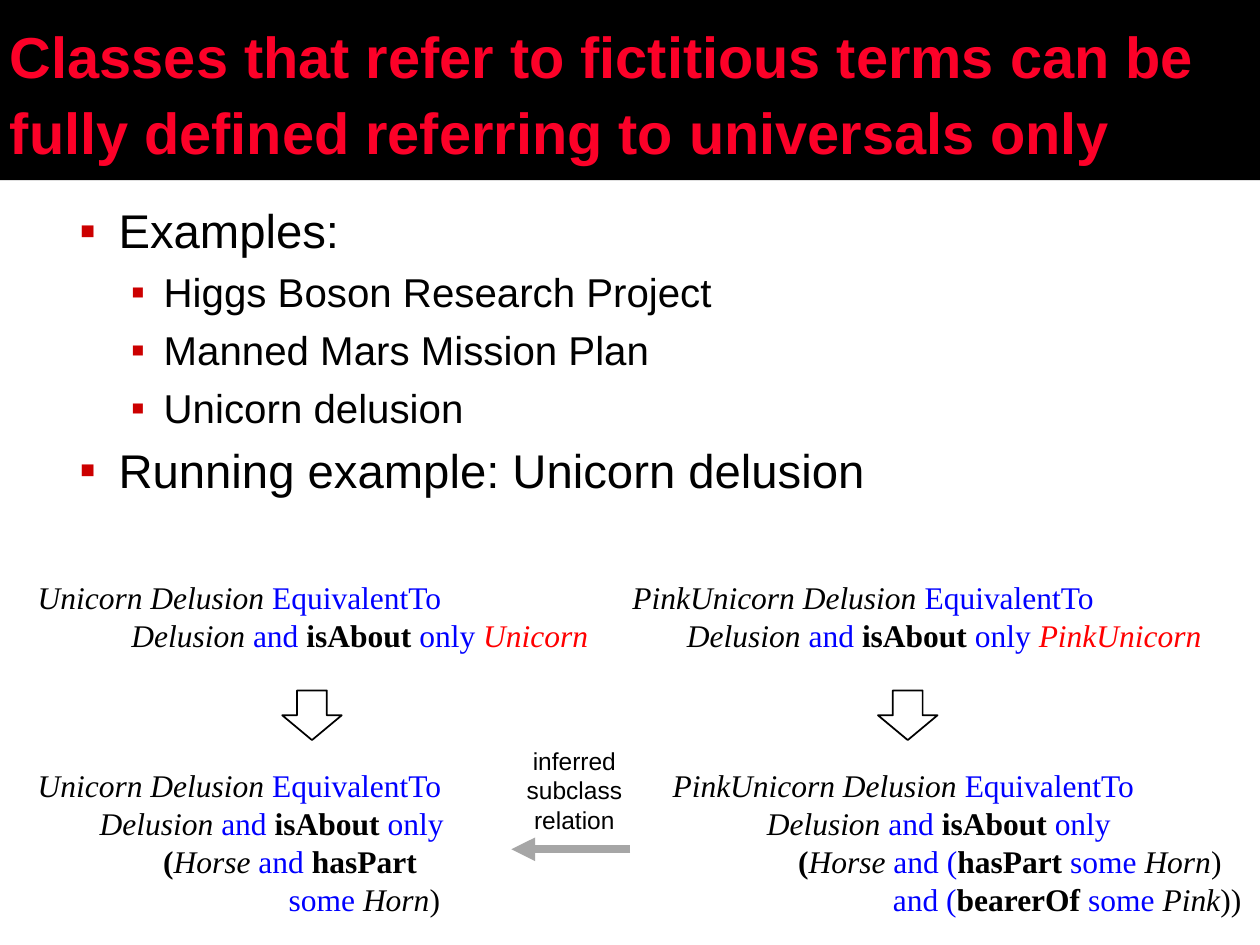
import pptx
import pptx.util
import pptx.dml.color
import pptx.enum.shapes
import pptx.enum.text
import pptx.oxml.ns
from lxml import etree
from pptx.util import Cm, Pt

COLORS = {
    "black": "000000",
    "title": "FC0128",
    "bullet": "CC0000",
    "keyword": "0000FF",
    "fictitious": "FF0000",
    "arrow": "A6A6A6",
}
STYLES = {
    "term": ("black", False, True),
    "keyword": ("keyword", False, False),
    "relation": ("black", True, False),
    "fictitious": ("fictitious", False, True),
    "plain": ("black", False, False),
}
BULLETS = [
    (0, "Examples:"),
    (1, "Higgs Boson Research Project"),
    (1, "Manned Mars Mission Plan"),
    (1, "Unicorn delusion"),
    (0, "Running example: Unicorn delusion"),
]
BULLET_LEVELS = [(27, 0.79, 0.79), (23, 1.7, 0.66)]
ABOUT_ONLY = [("term", "Delusion "), ("keyword", "and "), ("relation", "isAbout "), ("keyword", "only ")]


def rgb(name):
    """Return the named palette colour."""
    return pptx.dml.color.RGBColor.from_string(COLORS[name])


def format_run(run, size, font, color, bold=False, italic=False):
    """Set the character format of a run."""
    run.font.size = Pt(size)
    run.font.name = font
    run.font.color.rgb = rgb(color)
    run.font.bold = bold
    run.font.italic = italic


def add_element(parent, tag, **attributes):
    """Append a drawing element and return it."""
    return etree.SubElement(parent, pptx.oxml.ns.qn(tag), **attributes)


def set_indent(paragraph, left, hanging=0):
    """Indent a paragraph and return its properties element."""
    properties = paragraph._p.get_or_add_pPr()
    properties.set("marL", str(Cm(left)))
    properties.set("indent", str(-Cm(hanging)))
    return properties


def place(shape, left, top, width, height):
    """Move and size a placeholder and set its insets."""
    shape.left, shape.top = Cm(left), Cm(top)
    shape.width, shape.height = Cm(width), Cm(height)
    frame = shape.text_frame
    frame.auto_size = pptx.enum.text.MSO_AUTO_SIZE.NONE
    frame.margin_left = frame.margin_right = Cm(0.2)
    frame.margin_top = frame.margin_bottom = Cm(0.1)


def fill_title(shape):
    """Write the title on its black band."""
    place(shape, 0, 0, 25.4, 3.63)
    shape.fill.solid()
    shape.fill.fore_color.rgb = rgb("black")
    frame = shape.text_frame
    frame.vertical_anchor = pptx.enum.text.MSO_ANCHOR.MIDDLE
    frame.text = "Classes that refer to fictitious terms can be fully defined referring to universals only"
    paragraph = frame.paragraphs[0]
    paragraph.alignment = pptx.enum.text.PP_ALIGN.LEFT
    paragraph.line_spacing = 1.1
    format_run(paragraph.runs[0], 33, "Arial", "title", bold=True)


def fill_bullets(shape):
    """Write the two-level list of examples."""
    place(shape, 1.4, 3.96, 22.78, 14.3)
    frame = shape.text_frame
    frame.text = "\n".join(text for _, text in BULLETS)
    for index, (paragraph, (level, _)) in enumerate(zip(frame.paragraphs, BULLETS)):
        size, left, hanging = BULLET_LEVELS[level]
        paragraph.level = level
        properties = set_indent(paragraph, left, hanging)
        color = add_element(properties, "a:buClr")
        add_element(color, "a:srgbClr", val=COLORS["bullet"])
        add_element(properties, "a:buFont", typeface="Arial")
        add_element(properties, "a:buChar", char="▪")
        paragraph.space_before = Pt(5.4 if index else 0)
        format_run(paragraph.runs[0], size, "Arial", "black")


def add_definition(slide, left, top, width, height, name, lines):
    """Add a class definition whose lines are (indent, styled parts)."""
    box = slide.shapes.add_textbox(Cm(left), Cm(top), Cm(width), Cm(height))
    frame = box.text_frame
    frame.word_wrap = True
    heading = (0, [("term", name + " "), ("keyword", "EquivalentTo")])
    for index, (indent, parts) in enumerate([heading, *lines]):
        paragraph = frame.add_paragraph() if index else frame.paragraphs[0]
        set_indent(paragraph, indent)
        for style, text in parts:
            run = paragraph.add_run()
            run.text = text
            format_run(run, 18, "Times New Roman", *STYLES[style])


def add_down_arrow(slide, left):
    """Add an outlined block arrow between two definitions."""
    kind = pptx.enum.shapes.MSO_SHAPE.DOWN_ARROW
    arrow = slide.shapes.add_shape(kind, Cm(left), Cm(13.92), Cm(1.2), Cm(1))
    arrow.shadow.inherit = False
    arrow.fill.background()
    arrow.line.color.rgb = rgb("black")
    arrow.line.width = Pt(1)


def add_relation_arrow(slide):
    """Add the grey arrow pointing to the inferred superclass."""
    kind = pptx.enum.shapes.MSO_CONNECTOR.STRAIGHT
    arrow = slide.shapes.add_connector(kind, Cm(12.7), Cm(17.12), Cm(10.31), Cm(17.12))
    arrow.line.color.rgb = rgb("arrow")
    arrow.line.width = Pt(4.5)
    add_element(arrow.line._get_or_add_ln(), "a:tailEnd", type="triangle")
    add_element(arrow._element.spPr, "a:effectLst")


def add_relation_label(slide):
    """Add the caption above the grey arrow."""
    box = slide.shapes.add_textbox(Cm(10.36), Cm(14.91), Cm(2.44), Cm(2.06))
    frame = box.text_frame
    frame.word_wrap = False
    frame.text = "inferred\nsubclass\nrelation"
    for paragraph in frame.paragraphs:
        paragraph.alignment = pptx.enum.text.PP_ALIGN.CENTER
        format_run(paragraph.runs[0], 14, "Arial", "black")


def main():
    """Build the slide and save it."""
    presentation = pptx.Presentation()
    presentation.slide_width, presentation.slide_height = Cm(25.4), Cm(19.05)
    slide = presentation.slides.add_slide(presentation.slide_layouts[1])
    fill_title(slide.shapes.title)
    fill_bullets(slide.placeholders[1])

    add_definition(slide, 0.51, 11.53, 12.4, 1.8, "Unicorn Delusion", [
        (1.89, ABOUT_ONLY + [("fictitious", "Unicorn")]),
    ])
    add_definition(slide, 12.5, 11.53, 12.4, 1.8, "PinkUnicorn Delusion", [
        (1.1, ABOUT_ONLY + [("fictitious", "PinkUnicorn")]),
    ])
    add_definition(slide, 0.51, 15.32, 9.4, 3.33, "Unicorn Delusion", [
        (1.25, ABOUT_ONLY),
        (2.53, [("relation", "("), ("term", "Horse "), ("keyword", "and "), ("relation", "hasPart")]),
        (5.06, [("keyword", "some "), ("term", "Horn"), ("plain", ")")]),
    ])
    add_definition(slide, 13.31, 15.32, 12.09, 3.33, "PinkUnicorn Delusion", [
        (1.9, ABOUT_ONLY),
        (2.53, [("relation", "("), ("term", "Horse "), ("keyword", "and ("), ("relation", "hasPart "),
                ("keyword", "some "), ("term", "Horn"), ("plain", ")")]),
        (4.44, [("keyword", "and ("), ("relation", "bearerOf "), ("keyword", "some "),
                ("term", "Pink"), ("plain", "))")]),
    ])

    for left in (5.69, 17.7):
        add_down_arrow(slide, left)
    add_relation_arrow(slide)
    add_relation_label(slide)
    presentation.save("out.pptx")


if __name__ == "__main__":
    main()
